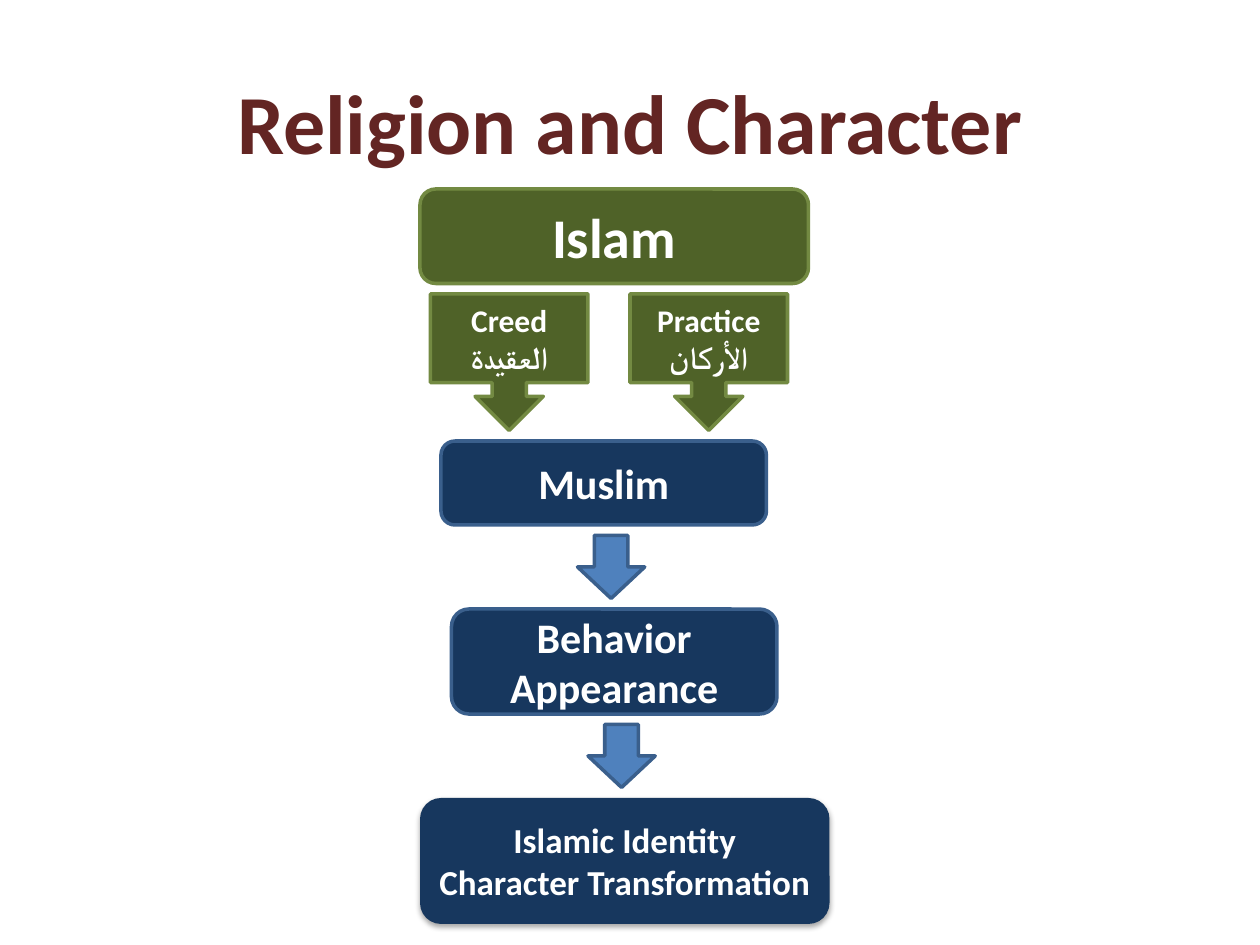
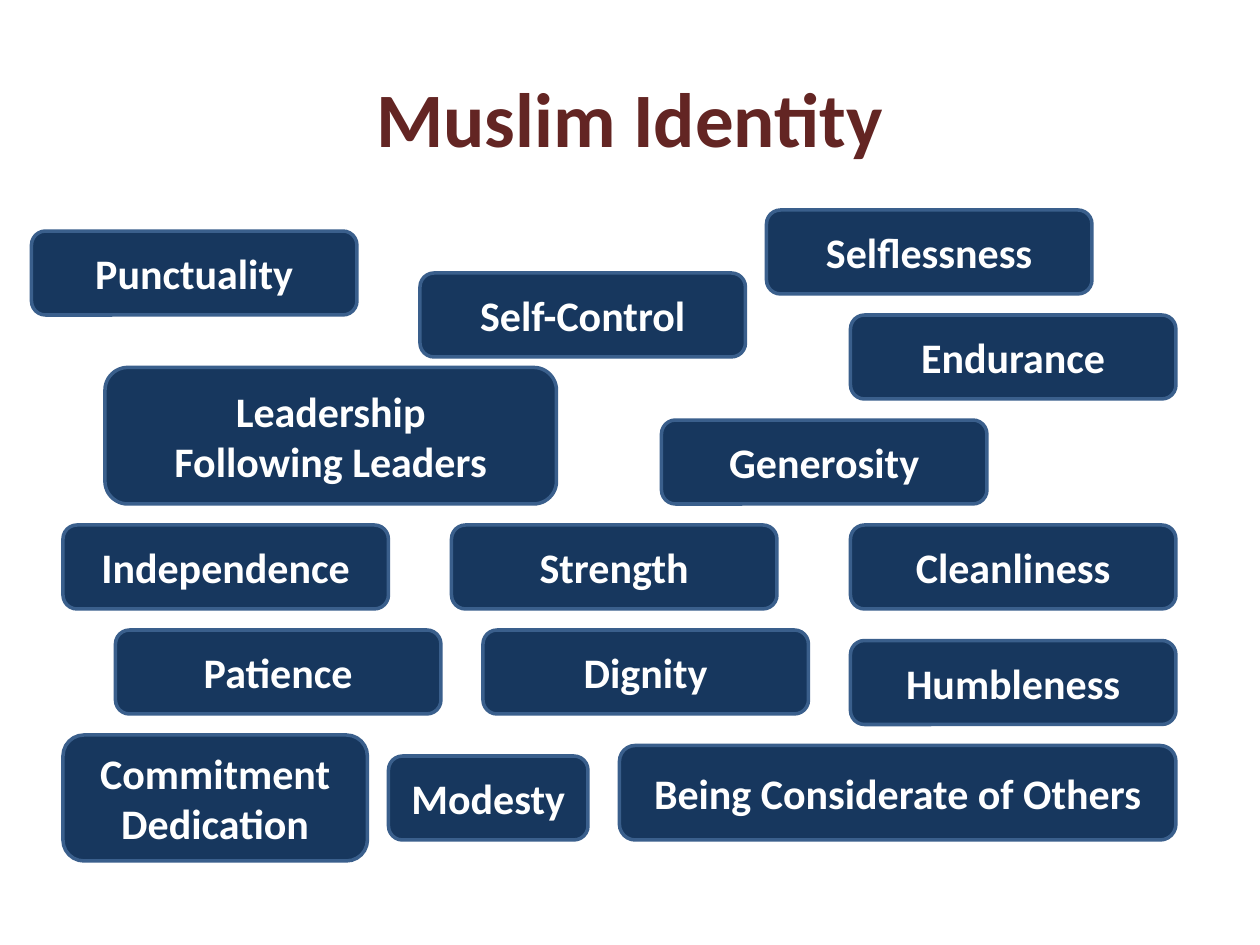
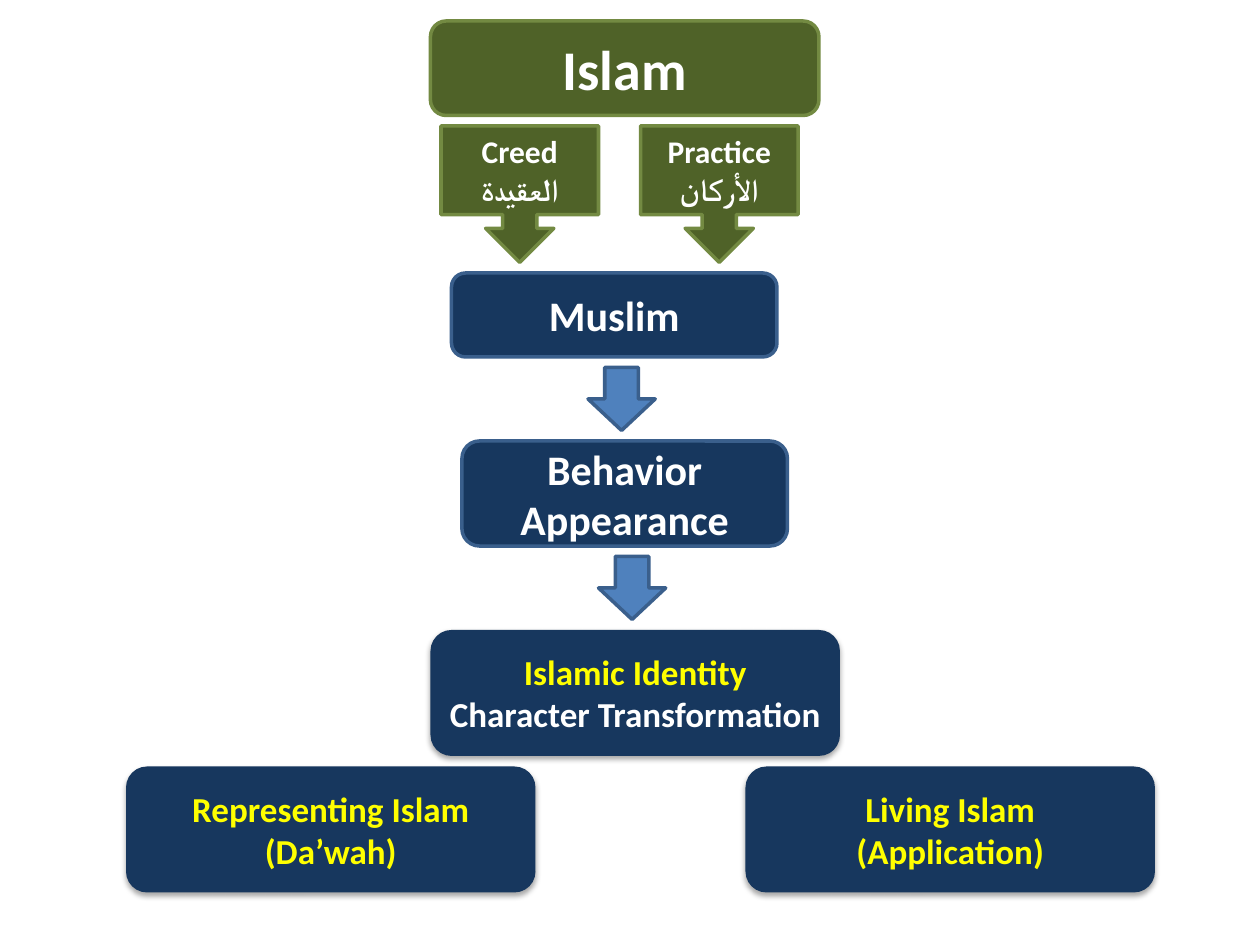
from pptx import Presentation
from pptx import util as u
from pptx.dml.color import RGBColor
from pptx.enum import shapes, text
from lxml import etree

MAROON = RGBColor(0x63, 0x25, 0x23)
GREEN = RGBColor(0x4F, 0x62, 0x28)
GREEN_EDGE = RGBColor(0x73, 0x8A, 0x42)
NAVY = RGBColor(0x17, 0x37, 0x5E)
BLUE = RGBColor(0x4F, 0x81, 0xBD)
BLUE_EDGE = RGBColor(0x3A, 0x5F, 0x8C)
WHITE = RGBColor(0xFF, 0xFF, 0xFF)
YELLOW = RGBColor(0xFF, 0xFF, 0x00)

CELL = u.Inches(1) // 12
ROUND = shapes.MSO_SHAPE.ROUNDED_RECTANGLE
ARROW = shapes.MSO_SHAPE.DOWN_ARROW
CALLOUT = shapes.MSO_SHAPE.DOWN_ARROW_CALLOUT
A = "http://schemas.openxmlformats.org/drawingml/2006/main"

ISLAM = dict(fill=GREEN, edge=GREEN_EDGE, size=32)
BRANCH = dict(kind=CALLOUT, fill=GREEN, edge=GREEN_EDGE, size=18)
TRAIT = dict(fill=NAVY, edge=BLUE_EDGE, size=24)
STEP = dict(kind=ARROW, fill=BLUE, edge=BLUE_EDGE)
OUTCOME = dict(fill=NAVY, size=20)

FLOW = [
    ((0, 0, 37, 9), ["Islam"], ISLAM),
    ((2, 24, 31, 8), ["Muslim"], TRAIT),
    ((15, 33, 6.4, 6), [], STEP),
    ((1, 10, 15, 13), ["Creed", "العقيدة"], BRANCH),
    ((20, 10, 15, 13), ["Practice", "الأركان"], BRANCH),
    ((16, 51, 6.4, 6), [], STEP),
    ((3, 40, 31, 10), ["Behavior", "Appearance"], TRAIT),
]
TRAITS = [
    ((40, 26), ["Self-Control"]),
    ((81, 30), ["Endurance"]),
    ((11, 60), ["Patience"]),
    ((73, 20), ["Selflessness"]),
    ((63, 40), ["Generosity"]),
    ((6, 70, 29, 12), ["Commitment", "Dedication"]),
    ((10, 35, 43, 13), ["Leadership", "Following Leaders"]),
    ((59, 71, 53, 9), ["Being Considerate of Others"]),
    ((3, 22), ["Punctuality"]),
    ((81, 50), ["Cleanliness"]),
    ((43, 50), ["Strength"]),
    ((6, 50), ["Independence"]),
    ((81, 61), ["Humbleness"]),
    ((46, 60), ["Dignity"]),
    ((37, 72, 19, 8), ["Modesty"]),
]


def cells(*values):
    """Turn grid cells into lengths."""
    return [u.Emu(int(v * CELL)) for v in values]


def write(sp, lines, size, colors):
    """Write centred bold lines, each with its colour, into a shape."""
    tf = sp.text_frame
    tf.word_wrap = True
    tf.vertical_anchor = text.MSO_ANCHOR.MIDDLE
    for i, (line, color) in enumerate(zip(lines, colors)):
        p = tf.add_paragraph() if i else tf.paragraphs[0]
        p.alignment = text.PP_ALIGN.CENTER
        r = p.add_run()
        r.text = line
        for name, value in dict(name="Calibri", size=u.Pt(size), bold=True).items():
            setattr(r.font, name, value)
        r.font.color.rgb = color


def add_shadow(sp):
    """Give a shape a soft shadow below it."""
    effects = sp._element.spPr.find(f"{{{A}}}effectLst")
    shadow = etree.SubElement(effects, f"{{{A}}}outerShdw", blurRad="40000",
                              dist="23000", dir="5400000", rotWithShape="0")
    black = etree.SubElement(shadow, f"{{{A}}}srgbClr", val="000000")
    etree.SubElement(black, f"{{{A}}}alpha", val="35000")


def add_box(s, box, lines, fill, edge=None, size=24, kind=ROUND, colors=(WHITE, WHITE)):
    """Add a filled shape: outlined if it has an edge colour, else shadowed."""
    sp = s.shapes.add_shape(kind, *cells(*box))
    sp.shadow.inherit = False
    sp.fill.solid()
    sp.fill.fore_color.rgb = fill
    if edge:
        sp.line.color.rgb = edge
        sp.line.width = u.Pt(2)
    else:
        sp.line.fill.background()
        add_shadow(sp)
    write(sp, lines, size, colors)


def add_title(s, title, top, size):
    """Add the slide title across the width."""
    sp = s.shapes.add_textbox(*cells(6, top, 108, 15))
    write(sp, [title], size, [MAROON])


def add_flow(s, left, top, identity_color):
    """Add the chain from Islam to identity at a grid position."""
    for (x, y, w, h), lines, style in FLOW:
        add_box(s, (left + x, top + y, w, h), lines, **style)
    add_box(s, (left, top + 58, 39, 12), ["Islamic Identity", "Character Transformation"],
            colors=(identity_color, WHITE), **OUTCOME)


def religion_slide(s):
    """Build the slide on religion and character."""
    add_title(s, "Religion and Character", 4, 48)
    add_flow(s, 40, 18, WHITE)


def identity_slide(s):
    """Build the slide of scattered traits."""
    add_title(s, "Muslim Identity", 3.6, 44)
    for (x, y, *extent), lines in TRAITS:
        add_box(s, (x, y, *(extent or (31, 8))), lines, **TRAIT)


def outcome_slide(s):
    """Build the chain with its two outcomes."""
    add_flow(s, 41, 2, YELLOW)
    for left, lines in ((12, ["Representing Islam", "(Da’wah)"]),
                        (71, ["Living Islam", "(Application)"])):
        add_box(s, (left, 73, 39, 12), lines, colors=(YELLOW, YELLOW), **OUTCOME)


def main():
    """Build and save the presentation."""
    prs = Presentation()
    prs.slide_width, prs.slide_height = cells(120, 90)
    for build in (religion_slide, identity_slide, outcome_slide):
        build(prs.slides.add_slide(prs.slide_layouts[6]))
    prs.save("out.pptx")


if __name__ == "__main__":
    main()
